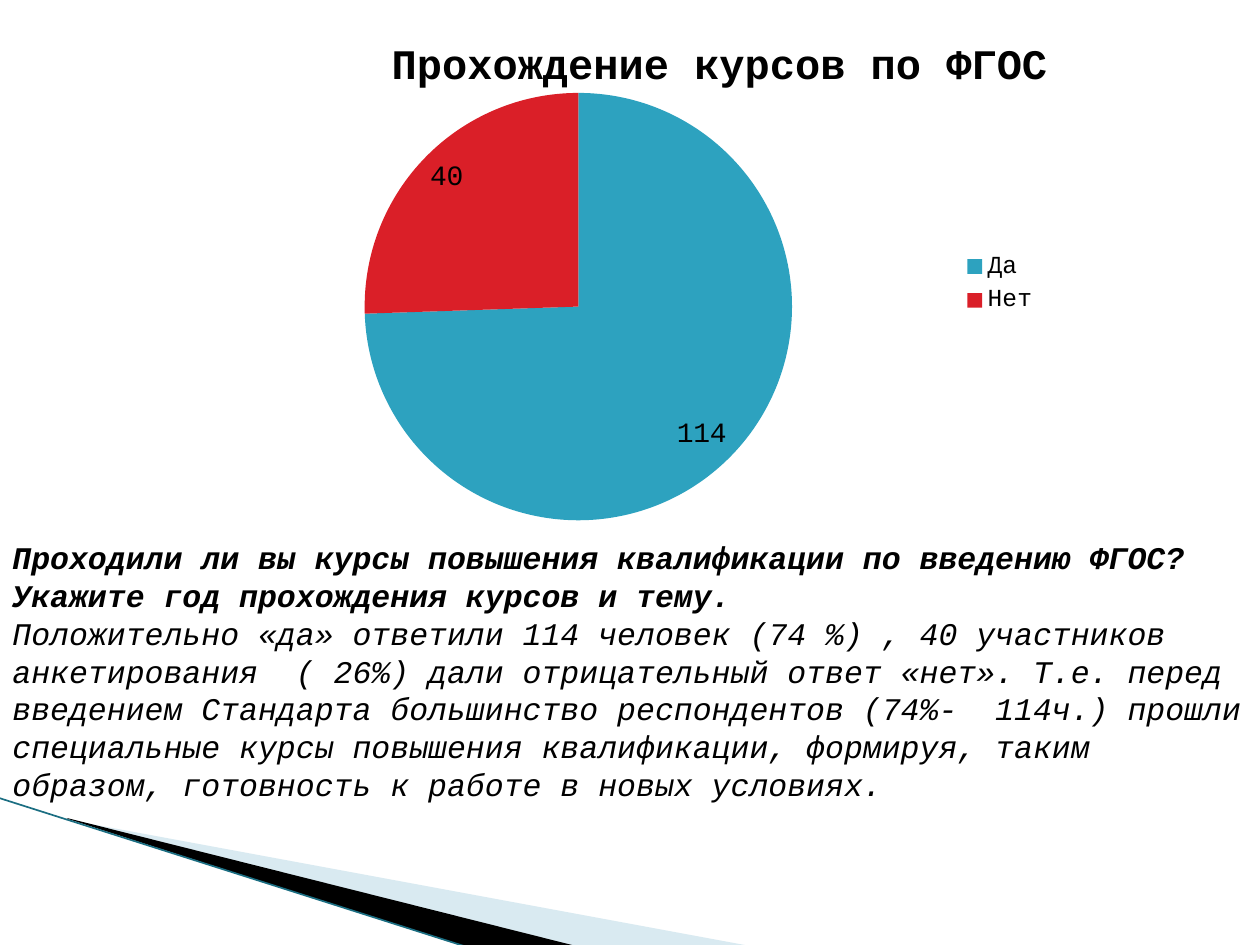
from pptx import Presentation
from pptx.chart.data import CategoryChartData
from pptx.dml.color import RGBColor
from pptx.enum.chart import XL_CHART_TYPE, XL_LABEL_POSITION, XL_LEGEND_POSITION
from pptx.enum.shapes import MSO_CONNECTOR
from pptx.oxml import parse_xml
from pptx.oxml.ns import nsdecls, qn
from pptx.util import Pt
from lxml import etree

# Content
FONT = "Courier New"
COLORS = {"text": "000000", "yes": "2DA2BF", "no": "DA1F28",
          "pale": "A0CBDC", "black": "000000", "line": "1B6E82"}
TITLE = "Прохождение курсов по ФГОС"
ANSWERS = [("Да", 105, "114", "yes"), ("Нет ", 36, "40", "no")]
PARAGRAPHS = [
    ("Проходили ли вы курсы повышения квалификации по введению ФГОС? "
     "Укажите год прохождения курсов и тему.", True),
    ("Положительно «да» ответили 114 человек (74 %) , 40 участников "
     "анкетирования  ( 26%) дали отрицательный ответ «нет». Т.е. перед "
     "введением Стандарта большинство респондентов (74%-  114ч.) прошли "
     "специальные курсы повышения квалификации, формируя, таким образом, "
     "готовность к работе в новых условиях.", False),
]
WEDGES = [
    ("pale", 40, [(69, 820), (750, 946), (575, 946), (69, 819)]),
    ("black", 100, [(67, 818), (576, 946), (469, 948), (68, 819)]),
]
EDGE = (-1, 798, 467, 947)
CHART_BOX = (203, 26, 863, 515)
TEXT_BOX = (0, 532, 1260, 280)
PLOT_LAYOUT = {"layoutTarget": "inner", "xMode": "edge", "yMode": "edge",
               "x": 0, "y": 0.13, "w": 0.87, "h": 0.83}
TITLE_LAYOUT = {"xMode": "edge", "yMode": "edge", "x": 0.21, "y": 0.01}
SCALE = 914400 / 126


def px(*values):
    return [round(value * SCALE) for value in values]


def color(name):
    return RGBColor.from_string(COLORS[name])


def style(font, size, bold=False, italic=False):
    font.name, font.size, font.bold, font.italic = FONT, Pt(size), bold, italic
    font.color.rgb = color("text")


def set_layout(parent, previous_tag, settings):
    for old in parent.findall(qn("c:layout")):
        parent.remove(old)
    layout = parse_xml(f"<c:layout {nsdecls('c')}><c:manualLayout/></c:layout>")
    for tag, value in settings.items():
        etree.SubElement(layout[0], qn(f"c:{tag}")).set("val", str(value))
    if previous_tag:
        parent.find(qn(previous_tag)).addnext(layout)
    else:
        parent.insert(0, layout)


presentation = Presentation()
presentation.slide_width, presentation.slide_height = px(1260, 945)
slide = presentation.slides.add_slide(presentation.slide_layouts[6])

# Corner wedges
for name, opacity, points in WEDGES:
    builder = slide.shapes.build_freeform(*points[0], scale=SCALE)
    builder.add_line_segments(points[1:], close=True)
    wedge = builder.convert_to_shape()
    wedge.shadow.inherit = False
    wedge.fill.solid()
    wedge.fill.fore_color.rgb = color(name)
    wedge.line.fill.background()
    if opacity < 100:
        fill_color = wedge.fill._xPr.find(qn("a:solidFill"))[0]
        etree.SubElement(fill_color, qn("a:alpha")).set("val", str(opacity * 1000))

edge = slide.shapes.add_connector(MSO_CONNECTOR.STRAIGHT, *px(*EDGE))
edge.line.color.rgb = color("line")
edge.line.width = Pt(0.95)
etree.SubElement(edge._element.spPr, qn("a:effectLst"))

# Pie chart
data = CategoryChartData()
data.categories = [answer[0] for answer in ANSWERS]
data.add_series(TITLE, [answer[1] for answer in ANSWERS])
chart = slide.shapes.add_chart(XL_CHART_TYPE.PIE, *px(*CHART_BOX), data).chart
style(chart.font, 10)

chart.has_title = True
chart_title = chart.chart_title
chart_title.text_frame.text = TITLE
style(chart_title.text_frame.paragraphs[0].runs[0].font, 24, bold=True)
set_layout(chart_title._element, "c:tx", TITLE_LAYOUT)
set_layout(chart._chartSpace.chart.plotArea, None, PLOT_LAYOUT)

chart.has_legend = True
chart.legend.position = XL_LEGEND_POSITION.RIGHT
chart.legend.include_in_layout = False
style(chart.legend.font, 14)

plot = chart.plots[0]
plot.vary_by_categories = True
series = plot.series[0]
series.data_labels.show_value = True
series.data_labels.position = XL_LABEL_POSITION.INSIDE_END
style(series.data_labels.font, 16)
for index, (_, _, label_text, name) in enumerate(ANSWERS):
    point = series.points[index]
    point.format.fill.solid()
    point.format.fill.fore_color.rgb = color(name)
    point.format.line.fill.background()
    label = point.data_label
    label.text_frame.text = label_text
    style(label.text_frame.paragraphs[0].runs[0].font, 16)
    label.position = XL_LABEL_POSITION.INSIDE_END

# Question and summary
text_frame = slide.shapes.add_textbox(*px(*TEXT_BOX)).text_frame
text_frame.word_wrap = True
for index, (text, bold) in enumerate(PARAGRAPHS):
    paragraph = text_frame.add_paragraph() if index else text_frame.paragraphs[0]
    paragraph.text = text
    style(paragraph.runs[0].font, 18, bold, italic=True)

presentation.save("out.pptx")
